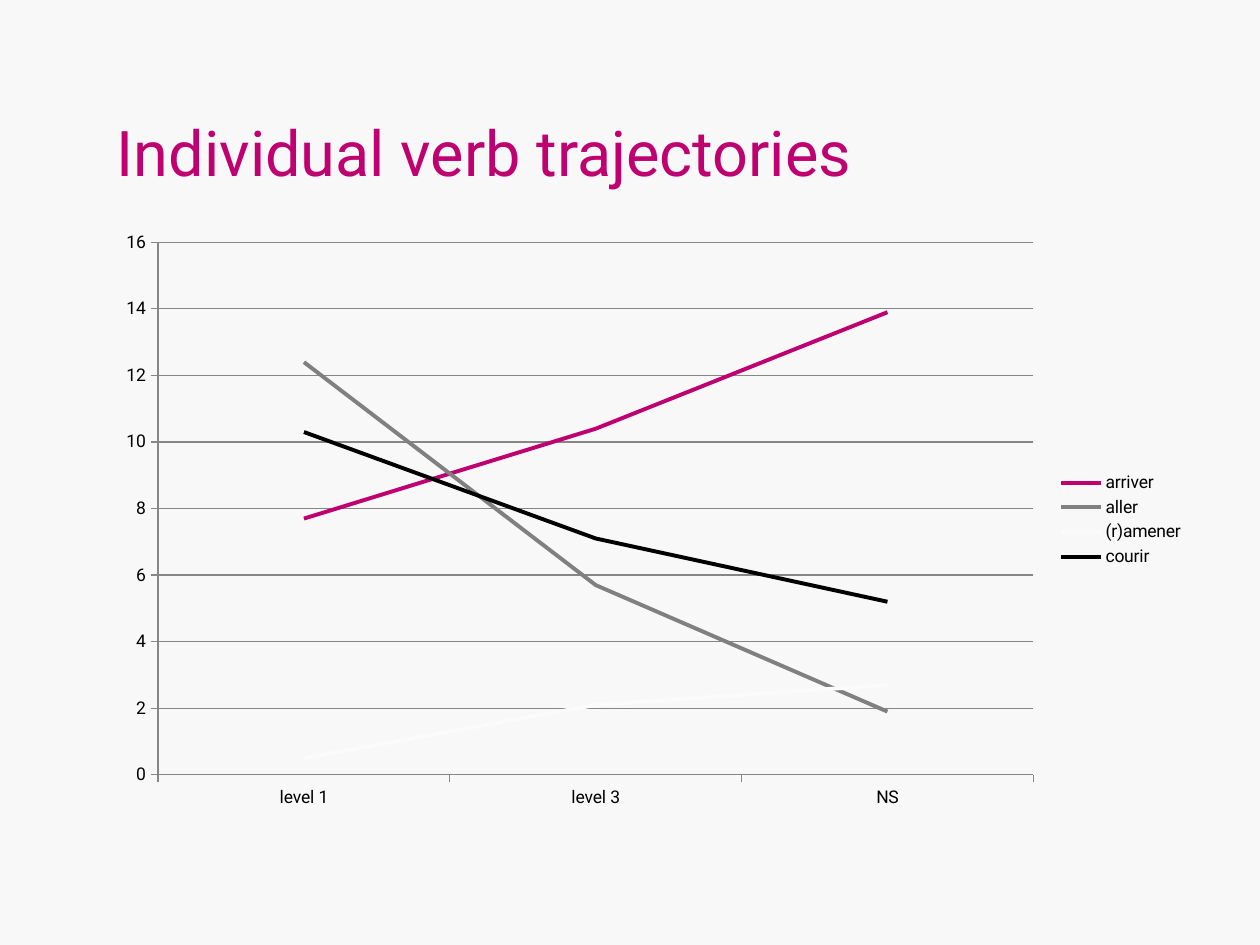
import pptx
import pptx.chart.data
import pptx.dml.color
import pptx.enum.chart
import pptx.enum.text
import pptx.util

RGBColor = pptx.dml.color.RGBColor
Inches = pptx.util.Inches
Pt = pptx.util.Pt

BACKGROUND = RGBColor(0xF8, 0xF8, 0xF8)
MAGENTA = RGBColor(0xBF, 0x00, 0x71)
GRAY = RGBColor(0x80, 0x80, 0x80)
PALE = RGBColor(0xFB, 0xFB, 0xFB)
BLACK = RGBColor(0x00, 0x00, 0x00)
AXIS_GRAY = RGBColor(0x86, 0x86, 0x86)

FONT = "Roboto"
LEFT = Inches(0.83)
LEVELS = ["level 1", "level 3", "NS"]
VERBS = [
    ("arriver", [7.7, 10.4, 13.9], MAGENTA),
    ("aller", [12.4, 5.7, 1.9], GRAY),
    ("(r)amener", [0.5, 2.1, 2.7], PALE),
    ("courir", [10.3, 7.1, 5.2], BLACK),
]


def style_font(font, size, color):
    font.name = FONT
    font.size = Pt(size)
    font.color.rgb = color


def style_line(line, width, color):
    line.width = Pt(width)
    line.color.rgb = color


def add_title(s, text):
    sp = s.shapes.add_textbox(LEFT, Inches(0.3), Inches(6.77), Inches(1.25))
    tf = sp.text_frame
    tf.word_wrap = False
    tf.vertical_anchor = pptx.enum.text.MSO_ANCHOR.BOTTOM
    tf.text = text
    p = tf.paragraphs[0]
    p.alignment = pptx.enum.text.PP_ALIGN.LEFT
    style_font(p.runs[0].font, 36, MAGENTA)


def style_axis(axis):
    axis.major_tick_mark = pptx.enum.chart.XL_TICK_MARK.OUTSIDE
    axis.minor_tick_mark = pptx.enum.chart.XL_TICK_MARK.NONE
    style_line(axis.format.line, 0.75, AXIS_GRAY)


def add_verb_chart(s):
    data = pptx.chart.data.CategoryChartData()
    data.categories = LEVELS
    for name, values, _ in VERBS:
        data.add_series(name, values)
    chart = s.shapes.add_chart(
        pptx.enum.chart.XL_CHART_TYPE.LINE,
        LEFT, Inches(1.75), Inches(8.67), Inches(4.75), data,
    ).chart
    style_font(chart.font, 10, BLACK)
    chart.has_title = False
    chart.has_legend = True
    chart.legend.position = pptx.enum.chart.XL_LEGEND_POSITION.RIGHT
    chart.legend.include_in_layout = False

    for axis in (chart.category_axis, chart.value_axis):
        style_axis(axis)
    value_axis = chart.value_axis
    value_axis.minimum_scale = 0
    value_axis.maximum_scale = 16
    value_axis.major_unit = 2
    value_axis.has_major_gridlines = True
    style_line(value_axis.major_gridlines.format.line, 0.75, AXIS_GRAY)

    for series, (_, _, color) in zip(chart.plots[0].series, VERBS):
        series.smooth = False
        series.marker.style = pptx.enum.chart.XL_MARKER_STYLE.NONE
        style_line(series.format.line, 2.25, color)


def main():
    prs = pptx.Presentation()
    prs.slide_width = Inches(10)
    prs.slide_height = Inches(7.5)
    s = prs.slides.add_slide(prs.slide_layouts[6])
    s.background.fill.solid()
    s.background.fill.fore_color.rgb = BACKGROUND
    add_title(s, "Individual verb trajectories")
    add_verb_chart(s)
    prs.save("out.pptx")


if __name__ == "__main__":
    main()
